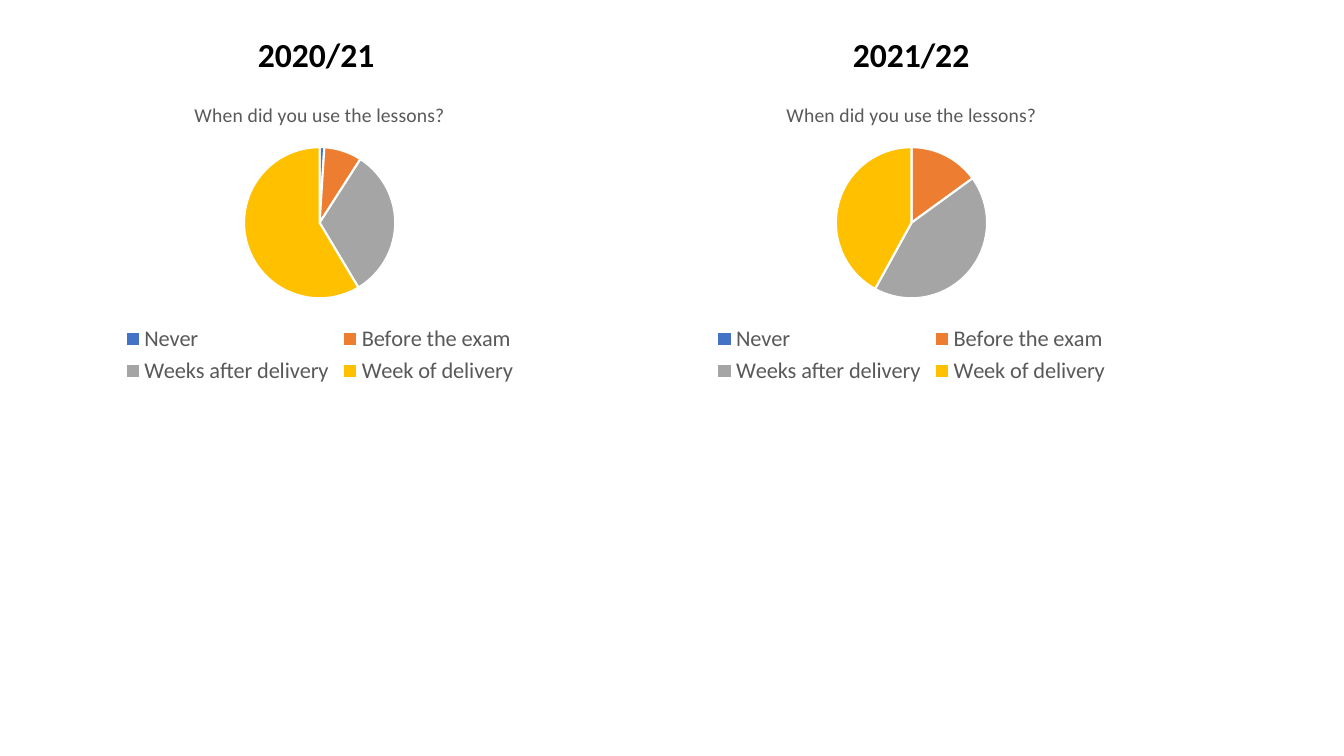
from lxml import etree
from pptx import Presentation
from pptx.chart.data import CategoryChartData
from pptx.dml.color import RGBColor
from pptx.enum.chart import XL_CHART_TYPE, XL_LEGEND_POSITION
from pptx.enum.text import MSO_AUTO_SIZE
from pptx.oxml.ns import qn
from pptx.util import Inches, Pt

PIE = XL_CHART_TYPE.PIE
BOTTOM = XL_LEGEND_POSITION.BOTTOM
GROW = MSO_AUTO_SIZE.SHAPE_TO_FIT_TEXT

BLACK = RGBColor(0x00, 0x00, 0x00)
WHITE = RGBColor(0xFF, 0xFF, 0xFF)
GREY_TEXT = RGBColor(0x59, 0x59, 0x59)
BLUE = RGBColor(0x44, 0x72, 0xC4)
ORANGE = RGBColor(0xED, 0x7D, 0x31)
GREY = RGBColor(0xA5, 0xA5, 0xA5)
YELLOW = RGBColor(0xFF, 0xC0, 0x00)

FONT = "Calibri"
QUESTION = "When did you use the lessons?"
ANSWERS = {
    "Never": BLUE,
    "Before the exam": ORANGE,
    "Weeks after delivery": GREY,
    "Week of delivery": YELLOW,
}
YEARS = [
    ("2020/21", 0.67, 2.46, (1, 8, 32, 58)),
    ("2021/22", 6.54, 8.36, (0, 15, 43, 42)),
]
PIE_AREA = {"x": 0.35, "y": 0.2, "w": 0.3, "h": 0.5}


def style(font, size, color, bold=False):
    font.name = FONT
    font.size = Pt(size)
    font.color.rgb = color
    font.bold = bold


def place_pie(chart):
    plot_area = chart.plots[0]._element.getparent()
    for old_layout in plot_area.findall(qn("c:layout")):
        plot_area.remove(old_layout)
    layout = etree.Element(qn("c:layout"))
    manual = etree.SubElement(layout, qn("c:manualLayout"))
    settings = {"layoutTarget": "inner", "xMode": "edge", "yMode": "edge", **PIE_AREA}
    for setting, value in settings.items():
        etree.SubElement(manual, qn(f"c:{setting}")).set("val", str(value))
    plot_area.insert(0, layout)


def add_heading(slide, year, left, top, width, height):
    heading = slide.shapes.add_textbox(left, top, width, height)
    frame = heading.text_frame
    frame.word_wrap = False
    frame.auto_size = GROW
    run = frame.paragraphs[0].add_run()
    run.text = year
    style(run.font, 24, BLACK, bold=True)


def add_answers_pie(slide, shares, left, top, width, height):
    data = CategoryChartData()
    data.categories = list(ANSWERS)
    data.add_series("Series 1", shares)
    chart = slide.shapes.add_chart(PIE, left, top, width, height, data).chart
    style(chart.font, 10, BLACK)

    chart.has_title = True
    question = chart.chart_title.text_frame.paragraphs[0].add_run()
    question.text = QUESTION
    style(question.font, 14, GREY_TEXT)
    chart.chart_title.include_in_layout = False

    chart.has_legend = True
    chart.legend.position = BOTTOM
    chart.legend.include_in_layout = False
    style(chart.legend.font, 16, GREY_TEXT)

    plot = chart.plots[0]
    plot.vary_by_categories = True
    for index, color in enumerate(ANSWERS.values()):
        slice_format = plot.series[0].points[index].format
        slice_format.fill.solid()
        slice_format.fill.fore_color.rgb = color
        slice_format.line.color.rgb = WHITE
        slice_format.line.width = Pt(1.5)
    place_pie(chart)


def main():
    deck = Presentation()
    deck.slide_width = Inches(13.33)
    deck.slide_height = Inches(7.5)
    slide = deck.slides.add_slide(deck.slide_layouts[6])
    for year, pie_left, heading_left, shares in YEARS:
        add_answers_pie(slide, shares, Inches(pie_left), Inches(0.86), Inches(5), Inches(3))
        add_heading(slide, year, Inches(heading_left), Inches(0.29), Inches(1.37), Inches(0.5))
    deck.save("out.pptx")


if __name__ == "__main__":
    main()
